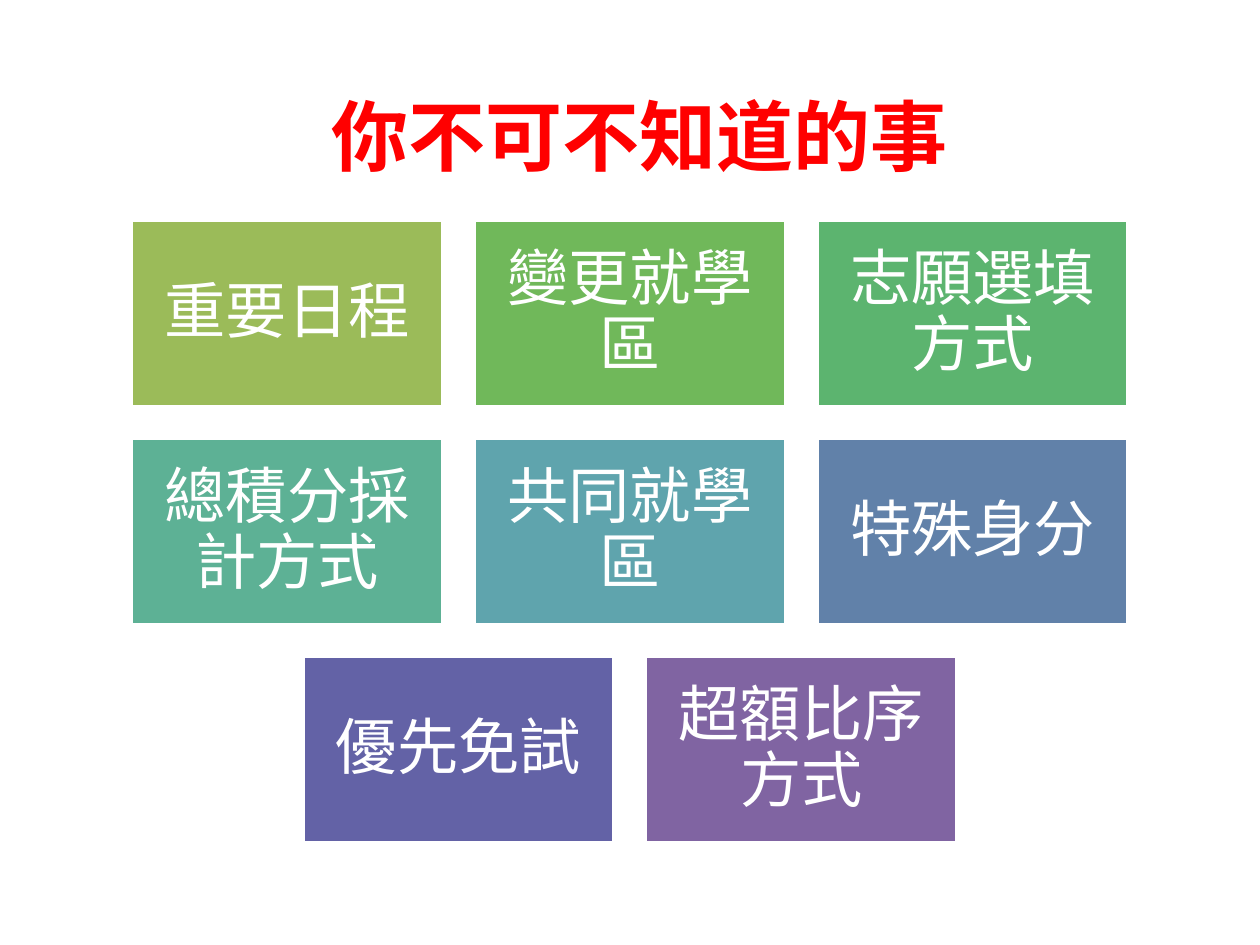
from lxml import etree
from pptx import Presentation, util as u
from pptx.dml.color import RGBColor
from pptx.enum import shapes, text
from pptx.oxml import ns

TITLE = "你不可不知道的事"
TOPIC_ROWS = [
    [("重要日程", "9BBB59"), ("變更就學區", "70B85A"), ("志願選填方式", "5CB46F")],
    [("總積分採計方式", "5DB195"), ("共同就學區", "5FA4AD"), ("特殊身分", "6181A9")],
    [("優先免試", "6362A6"), ("超額比序方式", "8064A2")],
]
THEME = {
    "title_font": "Noto Sans CJK SC", "title_size": 44, "title_color": "FF0000",
    "tile_font": "Calibri", "tile_size": 35, "tile_color": "FFFFFF",
    "border_color": "FFFFFF", "border_width": 2,
}
SLIDE_WIDTH, SLIDE_HEIGHT = 10, 7.5
TITLE_BOX = (0.58, 0.44, 9, 1.25)
TILE_WIDTH, TILE_HEIGHT = 2.47, 1.48
GAP = 0.25
GRID_TOP = 1.75
INSET = 0.15


def write(shape, content, role, bold=False):
    frame = shape.text_frame
    frame.word_wrap = True
    frame.vertical_anchor = text.MSO_ANCHOR.MIDDLE
    paragraph = frame.paragraphs[0]
    paragraph.text = content
    paragraph.alignment = text.PP_ALIGN.CENTER
    font = paragraph.font
    font.name = THEME[f"{role}_font"]
    font.size = u.Pt(THEME[f"{role}_size"])
    font.bold = bold
    font.color.rgb = RGBColor.from_string(THEME[f"{role}_color"])
    return paragraph


def add_title(slide):
    box = slide.shapes.add_textbox(*map(u.Inches, TITLE_BOX))
    paragraph = write(box, TITLE, "title", bold=True)
    properties = paragraph._p.pPr.find(ns.qn("a:defRPr"))
    etree.SubElement(properties, ns.qn("a:ea"), typeface=THEME["title_font"])


def add_tile(slide, left, top, label, color):
    bounds = map(u.Inches, (left, top, TILE_WIDTH, TILE_HEIGHT))
    tile = slide.shapes.add_shape(shapes.MSO_SHAPE.RECTANGLE, *bounds)
    tile.shadow.inherit = False
    tile.fill.solid()
    tile.fill.fore_color.rgb = RGBColor.from_string(color)
    tile.line.color.rgb = RGBColor.from_string(THEME["border_color"])
    tile.line.width = u.Pt(THEME["border_width"])
    frame = tile.text_frame
    frame.margin_left = frame.margin_right = u.Inches(INSET)
    frame.margin_top = frame.margin_bottom = u.Inches(INSET)
    paragraph = write(tile, label, "tile")
    paragraph.line_spacing = 0.9
    paragraph.space_after = u.Pt(0.35 * THEME["tile_size"])


def main():
    presentation = Presentation()
    presentation.slide_width = u.Inches(SLIDE_WIDTH)
    presentation.slide_height = u.Inches(SLIDE_HEIGHT)
    slide = presentation.slides.add_slide(presentation.slide_layouts[6])
    add_title(slide)
    for row, topics in enumerate(TOPIC_ROWS):
        row_width = len(topics) * (TILE_WIDTH + GAP) - GAP
        row_left = (SLIDE_WIDTH - row_width) / 2
        top = GRID_TOP + row * (TILE_HEIGHT + GAP)
        for column, (label, color) in enumerate(topics):
            left = row_left + column * (TILE_WIDTH + GAP)
            add_tile(slide, left, top, label, color)
    presentation.save("out.pptx")


if __name__ == "__main__":
    main()
